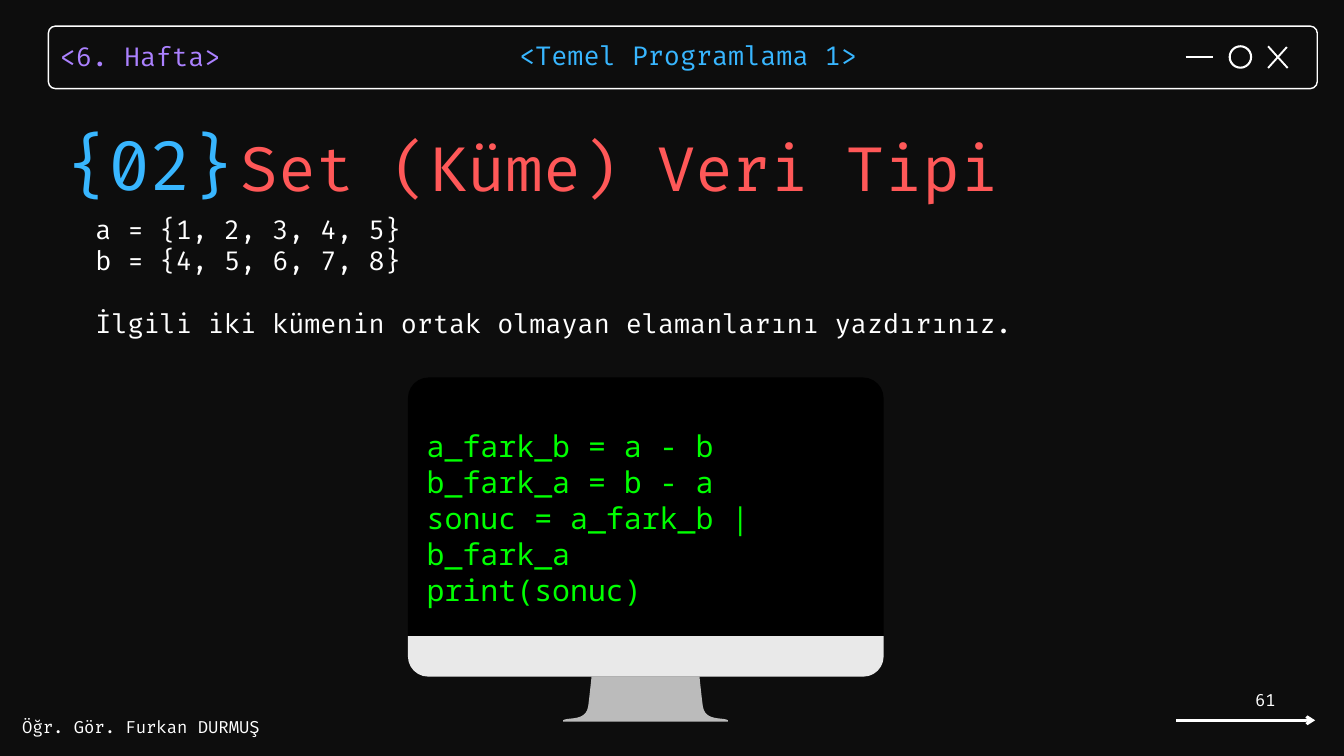
from typing import NamedTuple, Optional

import pptx
import pptx.dml.color
import pptx.enum.shapes
import pptx.enum.text
import pptx.oxml
import pptx.oxml.ns
import pptx.util

Cm = pptx.util.Cm
Pt = pptx.util.Pt
SHAPE = pptx.enum.shapes.MSO_SHAPE
ALIGN = pptx.enum.text.PP_ALIGN
ANCHOR = pptx.enum.text.MSO_ANCHOR

COLORS = {
    "background": "0D0D0D", "white": "FFFFFF", "purple": "AB81FF",
    "blue": "38B6FF", "red": "FF5858", "green": "00FF00",
    "black": "000000", "chin": "E9E9E9", "stand": "BBBBBB",
}


# Lengths are centimetres; sizes, spacings and line widths are points
class Label(NamedTuple):
    lines: list[str]
    box: tuple[float, float, float, float]
    size: float
    color: str
    font: str = "Fira Code"
    align: ALIGN = ALIGN.LEFT
    spacing: Optional[float] = None
    last_gap: float = 0
    insets: tuple[float, float] = (0, 0)
    anchor: ANCHOR = ANCHOR.TOP


class Block(NamedTuple):
    kind: SHAPE
    box: tuple[float, float, float, float]
    fill: Optional[str] = None
    line: Optional[str] = None
    width: float = 0
    adjustments: tuple[float, ...] = ()


class Stroke(NamedTuple):
    start: tuple[float, float]
    end: tuple[float, float]
    width: float = 2
    arrow: bool = False


HEADER = [
    Block(SHAPE.ROUNDED_RECTANGLE, (1.83, 0.99, 47.96, 2.36), line="white", width=1.5,
          adjustments=(0.11,)),
    Block(SHAPE.OVAL, (46.48, 1.75, 0.81, 0.81), line="white", width=2.25),
]
STROKES = [
    Stroke((47.93, 1.75), (48.67, 2.57)),
    Stroke((48.64, 1.78), (47.93, 2.57)),
    Stroke((44.81, 2.16), (45.85, 2.16)),
    Stroke((44.45, 27.23), (49.71, 27.23), 3, True),
]
MONITOR = [
    Block(SHAPE.ROUND_2_SAME_RECTANGLE, (15.42, 14.27, 17.98, 9.78), "black",
          adjustments=(0.08, 0)),
    Block(SHAPE.ROUND_2_SAME_RECTANGLE, (15.42, 24.05, 17.98, 1.53), "chin",
          adjustments=(0, 0.5)),
    Block(SHAPE.RECTANGLE, (16.13, 14.83, 16.54, 8.71), "black", "black", 2),
]
LABELS = [
    Label(["<6. Hafta>"], (2.26, 1.32, 8.64, 1.35), 28, "purple", spacing=39.2),
    Label(["<Temel Programlama 1>"], (19.63, 1.3, 13.44, 1.35), 28, "blue", spacing=39.2),
    Label(["Öğr. Gör. Furkan DURMUŞ"], (0.84, 27.1, 9.32, 0.76), 18, "white"),
    Label(["a = {1, 2, 3, 4, 5}", "b = {4, 5, 6, 7, 8}",
           "İlgili iki kümenin ortak olmayan elamanlarını yazdırınız."],
          (3.61, 8.05, 45.03, 4.78), 28, "white", align=ALIGN.JUSTIFY, last_gap=34),
    Label(["61"], (42.55, 25.93, 5.92, 1.02), 18, "white", align=ALIGN.RIGHT,
          insets=(0.25, 0.13), anchor=ANCHOR.MIDDLE),
    Label(["a_fark_b = a - b", "b_fark_a = b - a", "sonuc = a_fark_b | b_fark_a",
           "print(sonuc)"], (16.13, 16.18, 17.3, 5.46), 32, "green", "Noto Sans Mono"),
    Label(["Set (Küme) Veri Tipi"], (9.09, 4.09, 39.8, 3.45), 66, "red", spacing=102.6),
    Label(["{02}"], (2.51, 4.11, 7.72, 3.53), 73.3, "blue", spacing=102.6),
]

# Right edge of the stand, relative to its top centre: two Bezier curves
STAND_TOP = (24.4, 25.58)
STAND_CURVES = [
    ((2.04, 0), (2.04, 0), (2.12, 0.79), (2.17, 1.14)),
    ((2.17, 1.14), (2.27, 1.7), (2.93, 1.52), (3.11, 1.65)),
]


def rgb(name: str) -> pptx.dml.color.RGBColor:
    return pptx.dml.color.RGBColor.from_string(COLORS[name])


def paint(sp, fill: Optional[str], line: Optional[str] = None, width: float = 0) -> None:
    sp.shadow.inherit = False
    if fill:
        sp.fill.solid()
        sp.fill.fore_color.rgb = rgb(fill)
    else:
        sp.fill.background()
    if line:
        sp.line.color.rgb = rgb(line)
        sp.line.width = Pt(width)
    else:
        sp.line.fill.background()


def add_block(s, block: Block) -> None:
    sp = s.shapes.add_shape(block.kind, *map(Cm, block.box))
    for i, value in enumerate(block.adjustments):
        sp.adjustments[i] = value
    paint(sp, block.fill, block.line, block.width)


def add_stroke(s, stroke: Stroke) -> None:
    cx = s.shapes.add_connector(pptx.enum.shapes.MSO_CONNECTOR.STRAIGHT,
                                *map(Cm, stroke.start + stroke.end))
    cx.line.color.rgb = rgb("white")
    cx.line.width = Pt(stroke.width)
    if stroke.arrow:
        tail = pptx.oxml.parse_xml(f'<a:tailEnd {pptx.oxml.ns.nsdecls("a")} type="arrow"/>')
        cx.line._get_or_add_ln().append(tail)
    cx._element.spPr.append(
        pptx.oxml.parse_xml(f'<a:effectLst {pptx.oxml.ns.nsdecls("a")}/>'))


def bezier(points: tuple, t: float) -> tuple[float, float]:
    weights = ((1 - t) ** 3, 3 * t * (1 - t) ** 2, 3 * t ** 2 * (1 - t), t ** 3)
    x, y = (sum(w * p[i] for w, p in zip(weights, points)) for i in (0, 1))
    return x, y


def add_stand(s) -> None:
    steps = 12
    right = [bezier(c, i / steps) for c in STAND_CURVES for i in range(steps + 1)]
    right.append((3.11, 1.7))
    outline = right + [(-x, y) for x, y in reversed(right)]
    points = [(Cm(STAND_TOP[0] + x), Cm(STAND_TOP[1] + y)) for x, y in outline]
    builder = s.shapes.build_freeform(*points[0])
    builder.add_line_segments(points[1:], close=True)
    paint(builder.convert_to_shape(), "stand")


def add_label(s, label: Label) -> None:
    tf = s.shapes.add_textbox(*map(Cm, label.box)).text_frame
    tf.word_wrap = True
    tf.vertical_anchor = label.anchor
    tf.margin_left = tf.margin_right = Cm(label.insets[0])
    tf.margin_top = tf.margin_bottom = Cm(label.insets[1])
    tf.text = "\n".join(label.lines)
    for p in tf.paragraphs:
        p.alignment = label.align
        if label.spacing:
            p.line_spacing = Pt(label.spacing)
        for r in p.runs:
            r.font.name = label.font
            r.font.size = Pt(label.size)
            r.font.color.rgb = rgb(label.color)
    if label.last_gap:
        tf.paragraphs[-1].space_before = Pt(label.last_gap)


def main() -> None:
    prs = pptx.Presentation()
    prs.slide_width, prs.slide_height = Cm(50.8), Cm(28.58)
    s = prs.slides.add_slide(prs.slide_layouts[6])
    s.background.fill.solid()
    s.background.fill.fore_color.rgb = rgb("background")

    # Window bar, its buttons and the footer arrow
    for block in HEADER:
        add_block(s, block)
    for stroke in STROKES:
        add_stroke(s, stroke)

    # Monitor
    add_stand(s)
    for block in MONITOR:
        add_block(s, block)

    # Texts
    for label in LABELS:
        add_label(s, label)
    prs.save("out.pptx")


if __name__ == "__main__":
    main()
